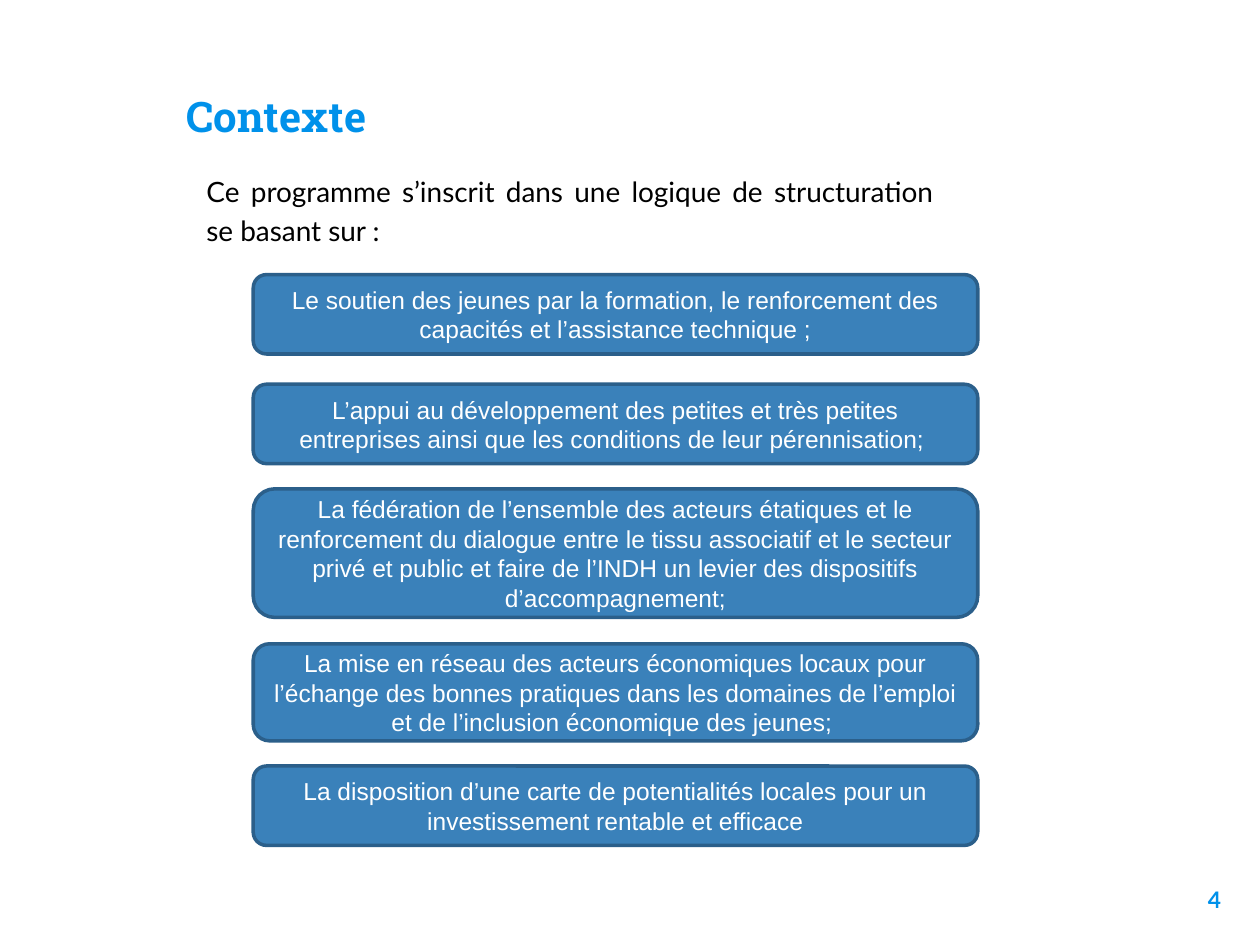
"""Build the "Contexte" slide: a heading, an introduction and five programme pillars."""
from pptx import Presentation
from pptx import util as u
from pptx.dml.color import RGBColor
from pptx.enum import shapes, text

COLORS = {"accent": "0091EA", "ink": "000000", "panel": "3A81BA", "edge": "2B5F8A", "light": "FFFFFF"}
TITLE = "Contexte"
INTRO = "Ce programme s’inscrit dans une logique de structuration se basant sur :"
PAGE_NUMBER = "4"
PILLAR_LEFT, PILLAR_WIDTH = 2.01, 5.75
PILLARS = [
    (2.18, 0.63, "Le soutien des jeunes par la formation, le renforcement des capacités "
                 "et l’assistance technique ;"),
    (3.05, 0.63, "L’appui au développement des petites et très petites entreprises ainsi que "
                 "les conditions de leur pérennisation; "),
    (3.88, 1.02, "La fédération de l’ensemble des acteurs étatiques et le renforcement du dialogue "
                 "entre le tissu associatif et le secteur privé et public et faire de l’INDH "
                 "un levier des dispositifs d’accompagnement;"),
    (5.11, 0.77, "La mise en réseau des acteurs économiques locaux pour l’échange des bonnes pratiques "
                 "dans les domaines de l’emploi et de l’inclusion économique des jeunes; "),
    (6.08, 0.63, "La disposition d’une carte de potentialités locales pour un investissement "
                 "rentable et efficace"),
]


def color(name):
    return RGBColor.from_string(COLORS[name])


def inches(*lengths):
    return [u.Inches(length) for length in lengths]


def write(box, words, font, size, ink, align, anchor, bold=False, inset=0.05, spacing=1.0):
    frame = box.text_frame
    frame.text = words
    frame.word_wrap = True
    frame.auto_size = text.MSO_AUTO_SIZE.NONE
    frame.vertical_anchor = anchor
    frame.margin_left = frame.margin_right = u.Inches(0.1)
    frame.margin_top = frame.margin_bottom = u.Inches(inset)
    para = frame.paragraphs[0]
    para.alignment = align
    para.line_spacing = spacing
    for span in para.runs:
        span.font.name = font
        span.font.size = u.Pt(size)
        span.font.bold = bold
        span.font.color.rgb = color(ink)


def add_pillar(page, top, height, words):
    box = page.shapes.add_shape(shapes.MSO_SHAPE.ROUNDED_RECTANGLE,
                                *inches(PILLAR_LEFT, top, PILLAR_WIDTH, height))
    box.shadow.inherit = False
    box.fill.solid()
    box.fill.fore_color.rgb = color("panel")
    box.line.color.rgb = color("edge")
    box.line.width = u.Pt(2)
    write(box, words, "Arial", 14, "light", text.PP_ALIGN.CENTER, text.MSO_ANCHOR.MIDDLE)


def main():
    deck = Presentation()
    deck.slide_width, deck.slide_height = inches(10, 7.5)
    page = deck.slides.add_slide(deck.slide_layouts.get_by_name("Title Only"))

    title = page.shapes.title
    title.left, title.top, title.width, title.height = inches(1.38, 0.52, 2.88, 0.7)
    write(title, TITLE, "Roboto Slab", 24, "accent", text.PP_ALIGN.LEFT,
          text.MSO_ANCHOR.BOTTOM, bold=True, inset=0.1)

    intro = page.shapes.add_textbox(*inches(1.54, 1.3, 5.97, 1.03))
    write(intro, INTRO, "Lato", 16, "ink", text.PP_ALIGN.JUSTIFY,
          text.MSO_ANCHOR.TOP, spacing=1.15)

    for pillar in PILLARS:
        add_pillar(page, *pillar)

    number = page.shapes.add_textbox(*inches(9.19, 6.93, 0.6, 0.57))
    write(number, PAGE_NUMBER, "Lato", 13, "accent", text.PP_ALIGN.RIGHT,
          text.MSO_ANCHOR.TOP, bold=True, inset=0.1)

    deck.save("out.pptx")


if __name__ == "__main__":
    main()
